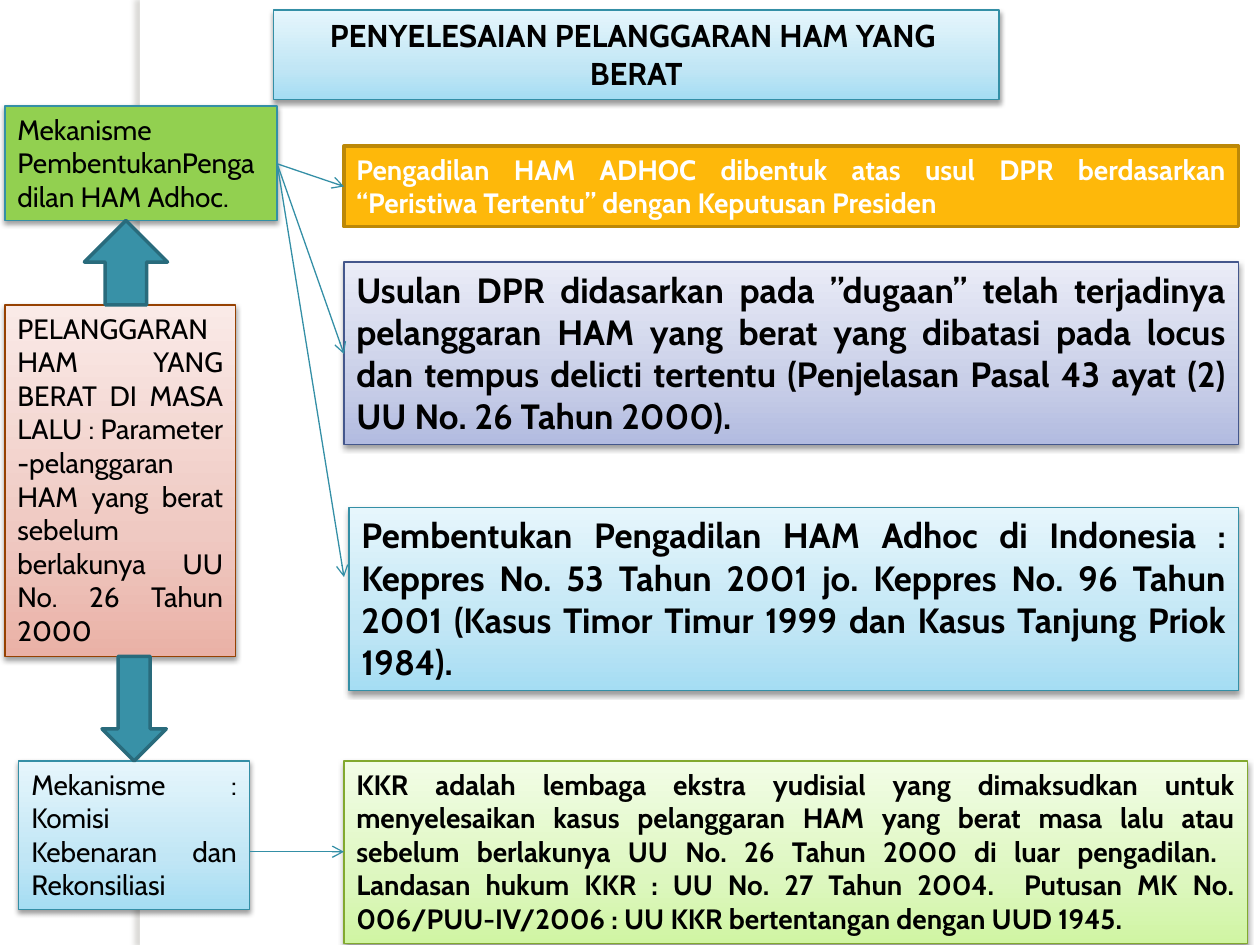
from copy import deepcopy
from dataclasses import dataclass

from lxml.etree import SubElement
from pptx import Presentation
from pptx.dml.color import RGBColor
from pptx.enum.shapes import MSO_CONNECTOR, MSO_SHAPE
from pptx.enum.text import MSO_ANCHOR, MSO_AUTO_SIZE, PP_ALIGN
from pptx.oxml.ns import qn
from pptx.util import Emu, Inches, Pt

# The slide is a grid of 100 columns and 75 rows of square cells.
COLUMNS, ROWS = 100, 75
CELL = Inches(0.1)
FONT = "Cabin"

COLORS = {
    "white": "FFFFFF", "black": "000000", "strip_shadow": "736F63",
    "green": "92D050", "amber": "FEB80A", "amber_line": "BC8807",
    "teal": "3891A7", "teal_dark": "296B7C", "teal_line": "348FA6",
    "red_line": "964101", "indigo_line": "44578C", "lime_line": "82A92F",
}
GRADIENTS = {
    "sky": ("A5DDF3", "C1E6F5", "E6F6FC"),
    "rose": ("EAB1A6", "EFC9C2", "FAEAE7"),
    "indigo": ("B2BBE0", "C9CFE8", "EAECF7"),
    "lime": ("D0F5A3", "DDF7BF", "F2FDE6"),
}
STOPS = (0, 0.35, 1)


@dataclass(frozen=True)
class Area:
    column: float
    row: float
    columns: float
    rows: float

    @property
    def right(self) -> float:
        return self.column + self.columns


@dataclass(frozen=True)
class Shadow:
    color: str
    opacity: int
    blur: float
    distance: float
    angle: int


@dataclass(frozen=True)
class Box:
    area: Area
    fill: str
    line: str
    text: str
    size: int = 16
    bold: bool = True
    color: str = "black"
    align: PP_ALIGN = PP_ALIGN.JUSTIFY
    line_width: float = 0.75
    raised: bool = True


STRIP = Area(11.1, 0, 0.8, ROWS)
STRIP_SHADOW = Shadow("strip_shadow", 25, 3, 3, 180)
BOX_SHADOW = Shadow("black", 38, 3.1, 1.6, 90)

TITLE = Box(Area(21.7, 0.8, 57.6, 7.1), "sky", "teal_line",
            "PENYELESAIAN PELANGGARAN HAM YANG  BERAT", size=18, align=PP_ALIGN.CENTER)
VIOLATION = Box(Area(0.4, 24.2, 18.3, 27.9), "rose", "red_line",
                "PELANGGARAN HAM YANG BERAT DI MASA LALU : Parameter -pelanggaran HAM "
                "yang berat sebelum berlakunya UU No. 26 Tahun 2000", bold=False)
COURT = Box(Area(0.4, 8.4, 21.6, 9.1), "green", "teal_line",
            "Mekanisme PembentukanPengadilan HAM Adhoc.", bold=False)
COMMISSION = Box(Area(1.5, 60.4, 18.3, 11.8), "sky", "teal_line",
                 "Mekanisme : Komisi Kebenaran dan Rekonsiliasi", bold=False)
PROPOSAL = Box(Area(27.3, 11.6, 71, 6.4), "amber", "amber_line",
               "Pengadilan HAM ADHOC dibentuk atas usul DPR berdasarkan “Peristiwa "
               "Tertentu” dengan Keputusan Presiden",
               color="white", line_width=2, raised=False)
ALLEGATION = Box(Area(27.3, 20.8, 71, 14.5), "indigo", "indigo_line",
                 "Usulan DPR didasarkan pada ”dugaan” telah terjadinya pelanggaran HAM "
                 "yang berat yang dibatasi pada locus dan tempus delicti tertentu "
                 "(Penjelasan Pasal 43 ayat (2) UU No. 26 Tahun 2000).", size=20)
CASES = Box(Area(27.7, 40.3, 70.6, 14.5), "sky", "teal_line",
            "Pembentukan Pengadilan HAM Adhoc di Indonesia : Keppres No. 53 Tahun 2001 "
            "jo. Keppres No. 96 Tahun 2001 (Kasus Timor Timur 1999 dan Kasus Tanjung "
            "Priok 1984).", size=20)
TRUTH = Box(Area(27.3, 60.4, 71.7, 14.5), "lime", "lime_line",
            "KKR adalah lembaga ekstra yudisial yang dimaksudkan untuk menyelesaikan "
            "kasus pelanggaran HAM yang berat masa lalu atau sebelum berlakunya UU No. 26 "
            "Tahun 2000 di luar pengadilan.  Landasan hukum KKR : UU No. 27 Tahun 2004.  "
            "Putusan MK No. 006/PUU-IV/2006 : UU KKR bertentangan dengan UUD 1945.")
BOXES = (TITLE, VIOLATION, COURT, COMMISSION, PROPOSAL, ALLEGATION, CASES, TRUTH)

BLOCK_ARROWS = (
    (MSO_SHAPE.UP_ARROW, Area(6.7, 17.5, 6.6, 6.7)),
    (MSO_SHAPE.DOWN_ARROW, Area(8.1, 52.1, 5.1, 8.3)),
)
# Each link: source box, row it leaves at, row it arrives at.
LINKS = ((COURT, 13, 14.8), (COURT, 13, 28.1), (COURT, 13, 45.8), (COMMISSION, 67.6, 67.6))


def cells(count: float) -> Emu:
    return Emu(round(count * CELL))


def rgb(name: str) -> RGBColor:
    return RGBColor.from_string(COLORS[name])


def paint(shape, fill: str) -> None:
    if fill not in GRADIENTS:
        shape.fill.solid()
        shape.fill.fore_color.rgb = rgb(fill)
        return
    shape.fill.gradient()
    shape.fill.gradient_angle = 90
    stop_list = shape._element.spPr.find(".//" + qn("a:gsLst"))
    stop_list.append(deepcopy(stop_list[-1]))
    for stop, position, color in zip(shape.fill.gradient_stops, STOPS, GRADIENTS[fill]):
        stop.position = position
        stop.color.rgb = RGBColor.from_string(color)


def add_shadow(shape, shadow: Shadow) -> None:
    effects = shape._element.spPr.find(qn("a:effectLst"))
    outer = SubElement(effects, qn("a:outerShdw"), blurRad=str(Pt(shadow.blur)),
                       dist=str(Pt(shadow.distance)), dir=str(shadow.angle * 60000),
                       rotWithShape="0")
    color = SubElement(outer, qn("a:srgbClr"), val=COLORS[shadow.color])
    SubElement(color, qn("a:alpha"), val=str(shadow.opacity * 1000))


def add_area(slide, kind: MSO_SHAPE, area: Area, fill: str, line: str | None = None,
             line_width: float = 0.75, shadow: Shadow | None = None):
    """Add a preset shape that covers the area."""
    shape = slide.shapes.add_shape(kind, cells(area.column), cells(area.row),
                                   cells(area.columns), cells(area.rows))
    paint(shape, fill)
    if line:
        shape.line.color.rgb = rgb(line)
        shape.line.width = Pt(line_width)
    else:
        shape.line.fill.background()
    shape.shadow.inherit = False
    if shadow:
        add_shadow(shape, shadow)
    return shape


def write(shape, text: str, *, size: int, bold: bool, color: str, align: PP_ALIGN) -> None:
    frame = shape.text_frame
    frame.word_wrap = True
    frame.auto_size = MSO_AUTO_SIZE.SHAPE_TO_FIT_TEXT
    frame.vertical_anchor = MSO_ANCHOR.TOP
    paragraph = frame.paragraphs[0]
    paragraph.alignment = align
    run = paragraph.add_run()
    run.text = text
    run.font.name = FONT
    run.font.size = Pt(size)
    run.font.bold = bold
    run.font.color.rgb = rgb(color)


def add_box(slide, box: Box) -> None:
    shape = add_area(slide, MSO_SHAPE.RECTANGLE, box.area, box.fill, box.line,
                     box.line_width, BOX_SHADOW if box.raised else None)
    write(shape, box.text, size=box.size, bold=box.bold, color=box.color, align=box.align)


def add_link(slide, source: Box, start_row: float, end_row: float) -> None:
    """Draw a thin arrow from the source box to the column of explanations."""
    connector = slide.shapes.add_connector(
        MSO_CONNECTOR.STRAIGHT, cells(source.area.right), cells(start_row),
        cells(PROPOSAL.area.column), cells(end_row))
    connector.line.color.rgb = rgb("teal_line")
    connector.line.width = Pt(0.75)
    SubElement(connector.line._get_or_add_ln(), qn("a:tailEnd"), type="arrow")
    SubElement(connector._element.spPr, qn("a:effectLst"))


def main() -> None:
    presentation = Presentation()
    presentation.slide_width = cells(COLUMNS)
    presentation.slide_height = cells(ROWS)
    slide = presentation.slides.add_slide(presentation.slide_layouts[6])

    add_area(slide, MSO_SHAPE.RECTANGLE, STRIP, "white", shadow=STRIP_SHADOW)
    for box in BOXES:
        add_box(slide, box)
    for kind, area in BLOCK_ARROWS:
        add_area(slide, kind, area, "teal", "teal_dark", line_width=2)
    for link in LINKS:
        add_link(slide, *link)

    presentation.save("out.pptx")


if __name__ == "__main__":
    main()
